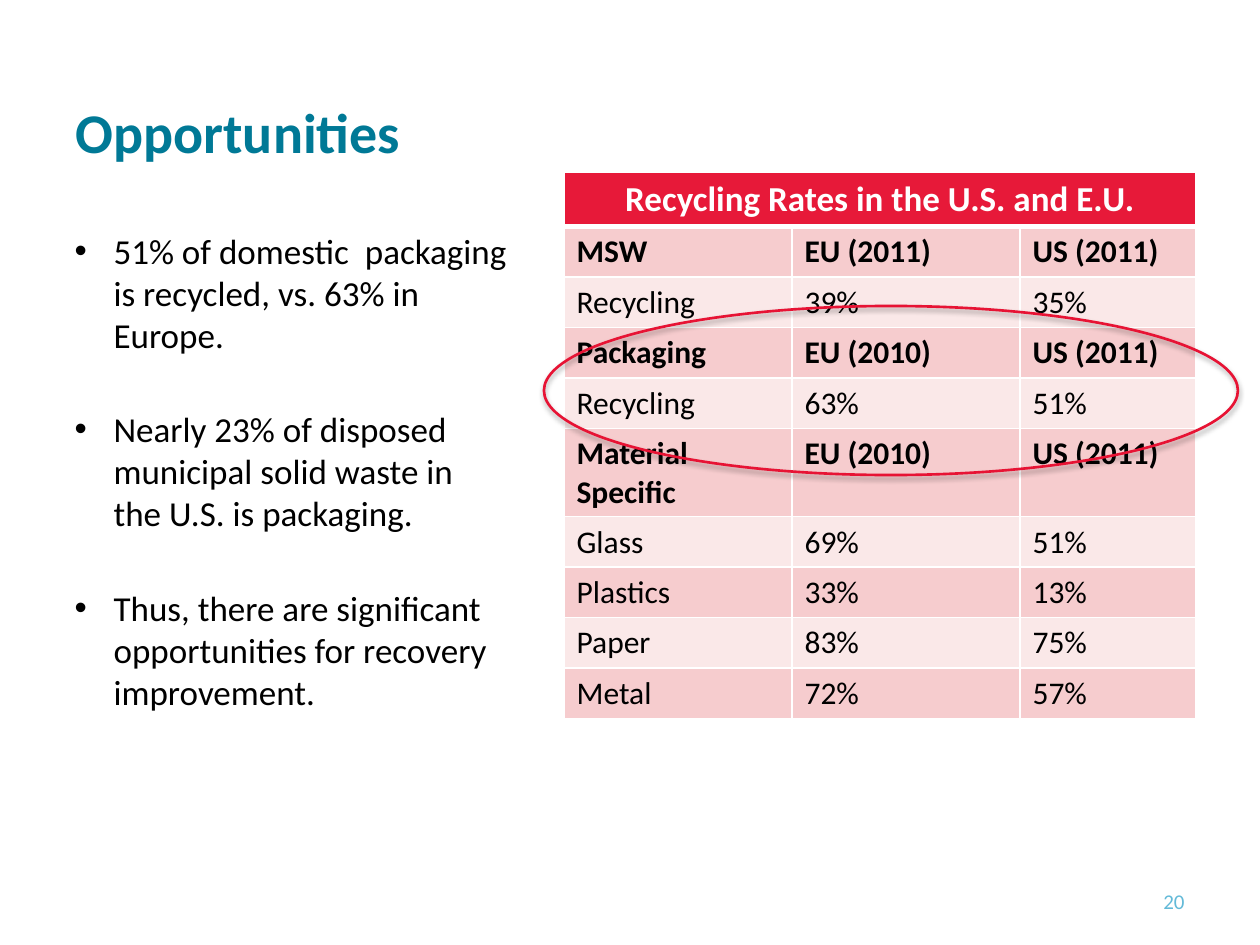
from lxml import etree
from pptx import Presentation
from pptx import util as u
from pptx.dml.color import RGBColor
from pptx.enum import shapes, text
from pptx.oxml import ns

SCALE = 914400 / 126
LEFT, MID, RIGHT = text.PP_ALIGN.LEFT, text.PP_ALIGN.CENTER, text.PP_ALIGN.RIGHT
CENTER = text.MSO_ANCHOR.MIDDLE

POINTS = [
    "51% of domestic  packaging is recycled, vs. 63% in Europe.",
    "Nearly 23% of disposed municipal solid waste in the U.S. is packaging.",
    "Thus, there are significant opportunities for recovery improvement.",
]
RATES = [
    ("MSW", "EU (2011)", "US (2011)"),
    ("Recycling", "39%", "35%"),
    ("Packaging", "EU (2010)", "US (2011)"),
    ("Recycling", "63%", "51%"),
    ("Material Specific", "EU (2010)", "US (2011)"),
    ("Glass", "69%", "51%"),
    ("Plastics", "33%", "13%"),
    ("Paper", "83%", "75%"),
    ("Metal", "72%", "57%"),
]
HEADS = ("MSW", "Packaging", "Material Specific")


def px(n):
    return u.Emu(round(n * SCALE))


def color(code):
    return RGBColor.from_string(code)


def node(parent, tag, **attrs):
    return etree.SubElement(parent, ns.qn(tag), {k: str(v) for k, v in attrs.items()})


class Deck:
    face = "Calibri"
    red, dark, light = "E71939", "F6CCCE", "FAE8E8"

    def __init__(self):
        self.prs = Presentation()
        self.prs.slide_width, self.prs.slide_height = px(1260), px(945)
        self.slide = self.prs.slides.add_slide(self.prs.slide_layouts[1])

    def place(self, shape, *box):
        for name, n in zip(("left", "top", "width", "height"), box):
            setattr(shape, name, px(n))

    def style(self, para, words, size, code="000000", bold=False, align=LEFT):
        para.text = words
        para.alignment = align
        look = {"name": self.face, "size": u.Pt(size), "bold": bold}
        for name, value in look.items():
            setattr(para.runs[0].font, name, value)
        para.runs[0].font.color.rgb = color(code)

    def title(self, words, *box):
        shape = self.slide.shapes.title
        self.place(shape, *box)
        shape.text_frame.vertical_anchor = CENTER
        self.style(shape.text_frame.paragraphs[0], words, 32, "007996", True)

    def bullets(self, items, *box):
        shape = self.slide.placeholders[1]
        self.place(shape, *box)
        frame = shape.text_frame
        frame.margin_top = px(40)
        frame.auto_size = text.MSO_AUTO_SIZE.NONE
        for i, words in enumerate(items):
            para = frame.paragraphs[0] if i == 0 else frame.add_paragraph()
            props = para._p.get_or_add_pPr()
            props.set("marL", str(px(63)))
            props.set("indent", str(px(-39)))
            node(props, "a:buFont", typeface="Arial")
            node(props, "a:buChar", char="•")
            self.style(para, words, 20)
            para.space_before = u.Pt(0)
            para.space_after = u.Pt(30 if i < len(items) - 1 else 0)

    def label(self, words, *box):
        frame = self.slide.shapes.add_textbox(*map(px, box)).text_frame
        frame.word_wrap = True
        frame.vertical_anchor = CENTER
        self.style(frame.paragraphs[0], words, 12, "63BAD8", align=RIGHT)

    def cell(self, cell, fill, base=1):
        # Borders must come before the fill in the cell properties
        props = cell._tc.get_or_add_tcPr()
        for side, width in zip("LRTB", (1, 1, 1, base)):
            line = node(props, f"a:ln{side}", w=u.Pt(width))
            node(node(line, "a:solidFill"), "a:srgbClr", val="FFFFFF")
        cell.fill.solid()
        cell.fill.fore_color.rgb = color(fill)

    def table(self, head, rows, cols, *box):
        grid = self.slide.shapes.add_table(len(rows) + 1, len(cols), *map(px, box)).table
        for col, width in zip(grid.columns, cols):
            col.width = px(width)
        # Header across all columns
        grid.rows[0].height = px(53)
        for cell in grid.rows[0].cells:
            self.cell(cell, self.red, 3)
        first = grid.cell(0, 0)
        first.merge(grid.cell(0, len(cols) - 1))
        self.style(first.text_frame.paragraphs[0], head, 20, "FFFFFF", True, MID)
        # Banded rows
        for r, row in enumerate(rows, 1):
            grid.rows[r].height = px(88 if row[0] == "Material Specific" else 50)
            for c, words in enumerate(row):
                cell = grid.cell(r, c)
                self.cell(cell, self.dark if r % 2 else self.light)
                self.style(cell.text_frame.paragraphs[0], words, 18, bold=row[0] in HEADS)

    def ring(self, *box):
        shape = self.slide.shapes.add_shape(shapes.MSO_SHAPE.OVAL, *map(px, box))
        shape.fill.background()
        shape.line.color.rgb = color("E71334")
        shape.line.width = u.Pt(1.5)
        shape.shadow.inherit = False
        glow = node(shape._element.spPr.find(ns.qn("a:effectLst")), "a:outerShdw",
                    blurRad=u.Pt(3.1), dist=u.Pt(1.8), dir=5400000, rotWithShape=0)
        node(node(glow, "a:srgbClr", val="000000"), "a:alpha", val=35000)


def main():
    deck = Deck()
    deck.title("Opportunities", 63, 91, 1134, 81)
    deck.label("20", 903, 876, 294, 50)
    deck.bullets(POINTS, 38, 189, 482, 630)
    deck.table("Recycling Rates in the U.S. and E.U.", RATES, (228, 228, 176),
               564, 172, 632, 545)
    # Ring around the packaging rates
    deck.ring(544, 306, 694, 169)
    deck.prs.save("out.pptx")


if __name__ == "__main__":
    main()
